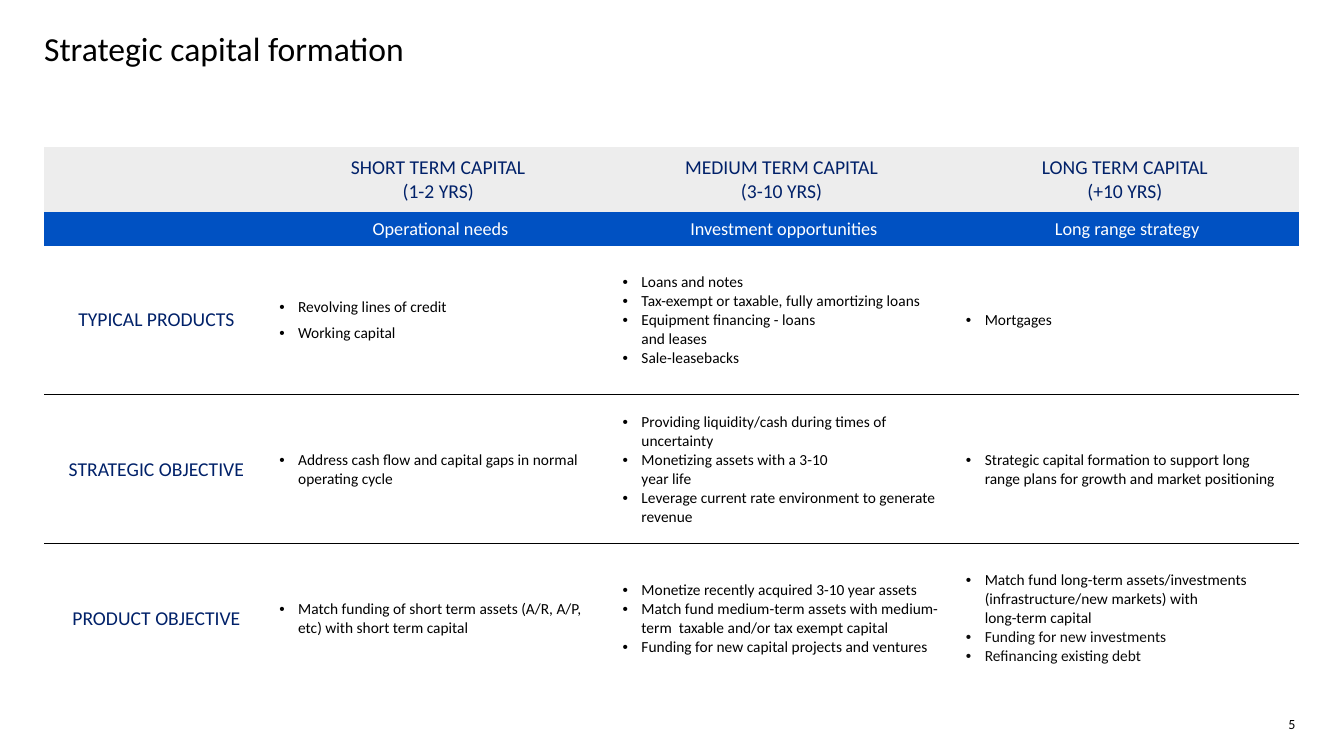
from copy import deepcopy
from dataclasses import dataclass

from lxml import etree
from pptx import Presentation
from pptx.dml.color import RGBColor
from pptx.enum.text import MSO_ANCHOR, PP_ALIGN
from pptx.oxml.ns import qn
from pptx.util import Pt

EMU_PER_PX = 9525
TOP, MIDDLE = MSO_ANCHOR.TOP, MSO_ANCHOR.MIDDLE
LEFT, CENTER = PP_ALIGN.LEFT, PP_ALIGN.CENTER
FONT = "Calibri"
BLACK, SOFT_BLACK, WHITE = "000000", "0D0D0D", "FFFFFF"
NAVY, BLUE, GREY = "012169", "0051C2", "EDEDED"
PLAIN_TABLE_STYLE = "{2D5ABB26-0587-4C30-8999-92F81FD0307C}"
LABEL_WIDTH, TERM_WIDTH = 214, 327
ROW_HEIGHTS = (62, 32, 142, 142, 142)
BULLET_INDENT = 18


@dataclass
class Line:
    text: str
    size: int = 11
    color: str = BLACK
    align: PP_ALIGN = LEFT
    bullet: bool = True
    space_before: float = 0


@dataclass
class Term:
    name: str
    years: str
    purpose: str


@dataclass
class Topic:
    label: str
    term_points: list[list[Line]]


TERMS = [
    Term("SHORT TERM CAPITAL ", "(1-2 YRS) ", "Operational needs"),
    Term("MEDIUM TERM CAPITAL ", "(3-10 YRS) ", "Investment opportunities"),
    Term("LONG TERM CAPITAL ", "(+10 YRS) ", "Long range strategy"),
]
TOPICS = [
    Topic("TYPICAL PRODUCTS", [
        [Line("Revolving lines of credit"), Line("Working capital", space_before=5.5)],
        [Line("Loans and notes"),
         Line("Tax-exempt or taxable, fully amortizing loans"),
         Line("Equipment financing - loans \nand leases"),
         Line("Sale-leasebacks")],
        [Line("Mortgages")],
    ]),
    Topic("STRATEGIC OBJECTIVE", [
        [Line("Address cash flow and capital gaps in normal operating cycle")],
        [Line("Providing liquidity/cash during times of uncertainty"),
         Line("Monetizing assets with a 3-10 \nyear life"),
         Line("Leverage current rate environment to generate revenue")],
        [Line("Strategic capital formation to support long range plans "
              "for growth and market positioning")],
    ]),
    Topic("PRODUCT OBJECTIVE", [
        [Line("Match funding of short term assets (A/R, A/P, etc) with short term capital")],
        [Line("Monetize recently acquired 3-10 year assets"),
         Line("Match fund medium-term assets with medium-term  taxable "
              "and/or tax exempt capital"),
         Line("Funding for new capital projects and ventures")],
        [Line("Match fund long-term assets/investments "
              "(infrastructure/new markets) with \nlong-term capital"),
         Line("Funding for new investments", color=SOFT_BLACK),
         Line("Refinancing existing debt", color=SOFT_BLACK)],
    ]),
]


def px(length: int) -> int:
    return length * EMU_PER_PX


def rgb(color: str) -> RGBColor:
    return RGBColor.from_string(color)


def apply(target, values: dict) -> None:
    for name, value in values.items():
        setattr(target, name, value)


def place(shape, left: int, top: int, width: int, height: int) -> None:
    apply(shape, {"left": px(left), "top": px(top),
                  "width": px(width), "height": px(height)})


def write_lines(frame, lines: list[Line]) -> None:
    for index, line in enumerate(lines):
        paragraph = frame.add_paragraph() if index else frame.paragraphs[0]
        paragraph.text = line.text
        apply(paragraph, {"alignment": line.align, "space_before": Pt(line.space_before)})
        for run in paragraph.runs:
            apply(run.font, {"name": FONT, "size": Pt(line.size), "bold": False})
            run.font.color.rgb = rgb(line.color)
        # Line breaks take the height of the text around them
        element = paragraph.runs[0].font._element
        for line_break in paragraph._p.findall(qn("a:br")):
            line_break.insert(0, deepcopy(element))
        if line.bullet:
            properties = paragraph._p.get_or_add_pPr()
            properties.set("marL", str(px(BULLET_INDENT)))
            properties.set("indent", str(-px(BULLET_INDENT)))
            etree.SubElement(properties, qn("a:buFont")).set("typeface", "Arial")
            etree.SubElement(properties, qn("a:buChar")).set("char", "•")


def fill_cell(cell, lines: list[Line], fill: str | None, side: int, edge: int) -> None:
    apply(cell, {"vertical_anchor": MIDDLE, "margin_left": px(side),
                 "margin_right": px(side), "margin_top": px(edge),
                 "margin_bottom": px(edge)})
    if fill:
        cell.fill.solid()
        cell.fill.fore_color.rgb = rgb(fill)
    else:
        cell.fill.background()
    write_lines(cell.text_frame, lines)


def rule_cell(cell, sides: list[str]) -> None:
    for position, side in enumerate(sides):
        border = etree.Element(qn(f"a:{side}"), w=str(Pt(1)))
        solid = etree.SubElement(border, qn("a:solidFill"))
        etree.SubElement(solid, qn("a:srgbClr")).set("val", BLACK)
        cell._tc.get_or_add_tcPr().insert(position, border)


def heading(text: str, size: int, color: str) -> Line:
    return Line(text, size, color, CENTER, False)


def add_capital_table(slide) -> None:
    widths = [LABEL_WIDTH] + [TERM_WIDTH] * len(TERMS)
    frame = slide.shapes.add_table(len(ROW_HEIGHTS), len(widths), px(42), px(140),
                                   px(sum(widths)), px(sum(ROW_HEIGHTS)))
    table = frame.table
    apply(table, {"first_row": False, "horz_banding": False})
    frame.element.find(f".//{qn('a:tableStyleId')}").text = PLAIN_TABLE_STYLE
    for column, width in zip(table.columns, widths):
        column.width = px(width)
    for row, height in zip(table.rows, ROW_HEIGHTS):
        row.height = px(height)

    # Two heading rows
    fill_cell(table.cell(0, 0), [], GREY, 0, 0)
    fill_cell(table.cell(1, 0), [], BLUE, 0, 0)
    for column, term in enumerate(TERMS, 1):
        names = [heading(text, 14, NAVY) for text in (term.name, term.years)]
        fill_cell(table.cell(0, column), names, GREY, 0, 0)
        fill_cell(table.cell(1, column), [heading(term.purpose, 13, WHITE)], BLUE, 0, 0)

    # Topic rows, ruled between neighbours
    for index, topic in enumerate(TOPICS):
        row = index + 2
        fill_cell(table.cell(row, 0), [heading(topic.label, 14, NAVY)], None, 10, 0)
        for column, points in enumerate(topic.term_points, 1):
            fill_cell(table.cell(row, column), points, WHITE, 10, 10)
        sides = ["lnT"] * (index > 0) + ["lnB"] * (index < len(TOPICS) - 1)
        for column in range(len(widths)):
            rule_cell(table.cell(row, column), sides)


def main() -> None:
    deck = Presentation()
    apply(deck, {"slide_width": px(1280), "slide_height": px(720)})
    slide = deck.slides.add_slide(deck.slide_layouts[5])

    # Title
    title = slide.shapes.title
    place(title, 42, 22, 1195, 75)
    apply(title.text_frame, {"vertical_anchor": TOP, "word_wrap": True,
                             "margin_left": 0, "margin_right": 0,
                             "margin_top": px(5), "margin_bottom": px(5)})
    write_lines(title.text_frame, [Line("Strategic capital formation", 24, bullet=False)])

    add_capital_table(slide)

    # Page number
    page_number = slide.shapes.add_textbox(px(1192), px(677), px(77), px(24))
    page_number.text_frame.word_wrap = True
    write_lines(page_number.text_frame, [heading("5", 10, BLACK)])

    deck.save("out.pptx")


if __name__ == "__main__":
    main()
